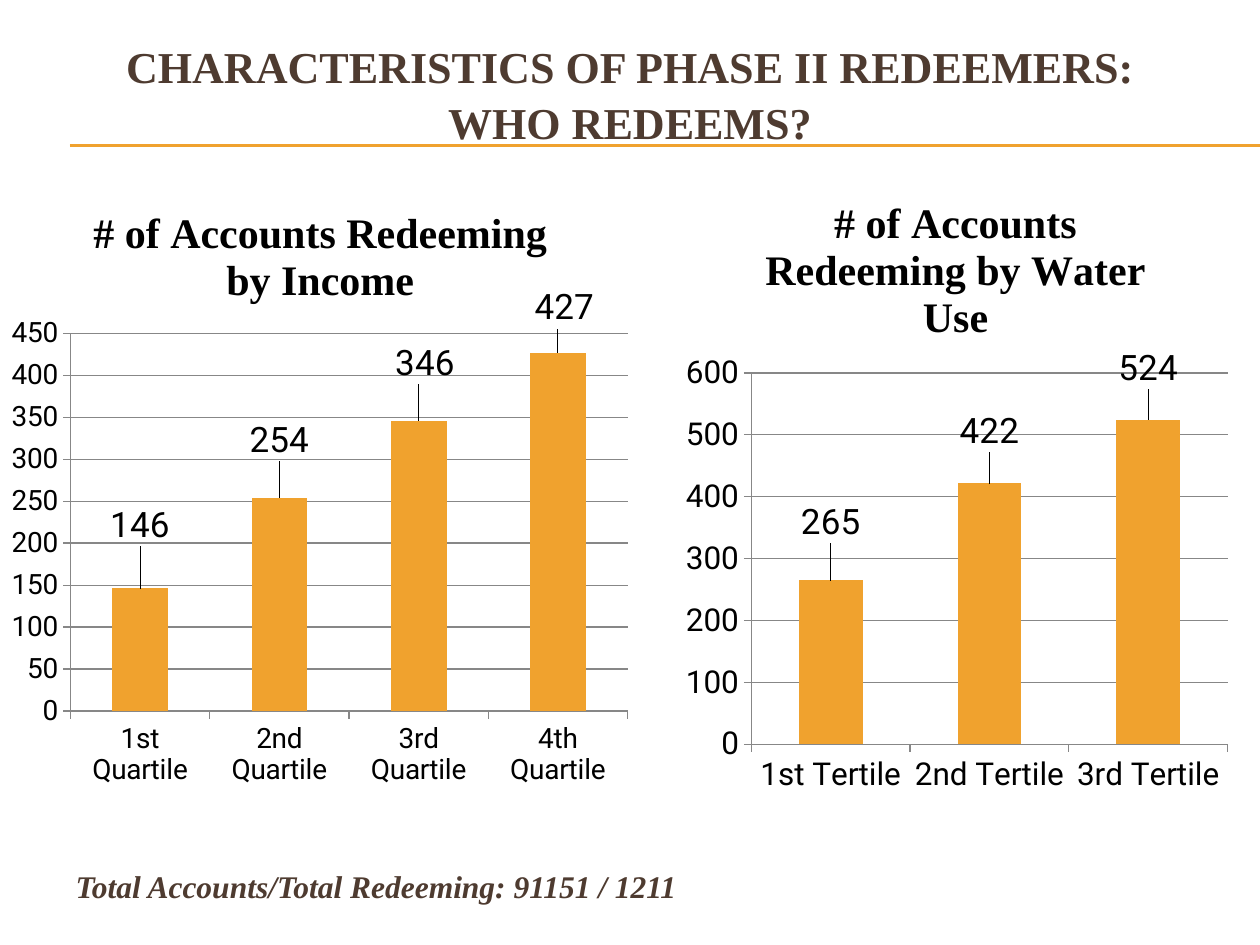
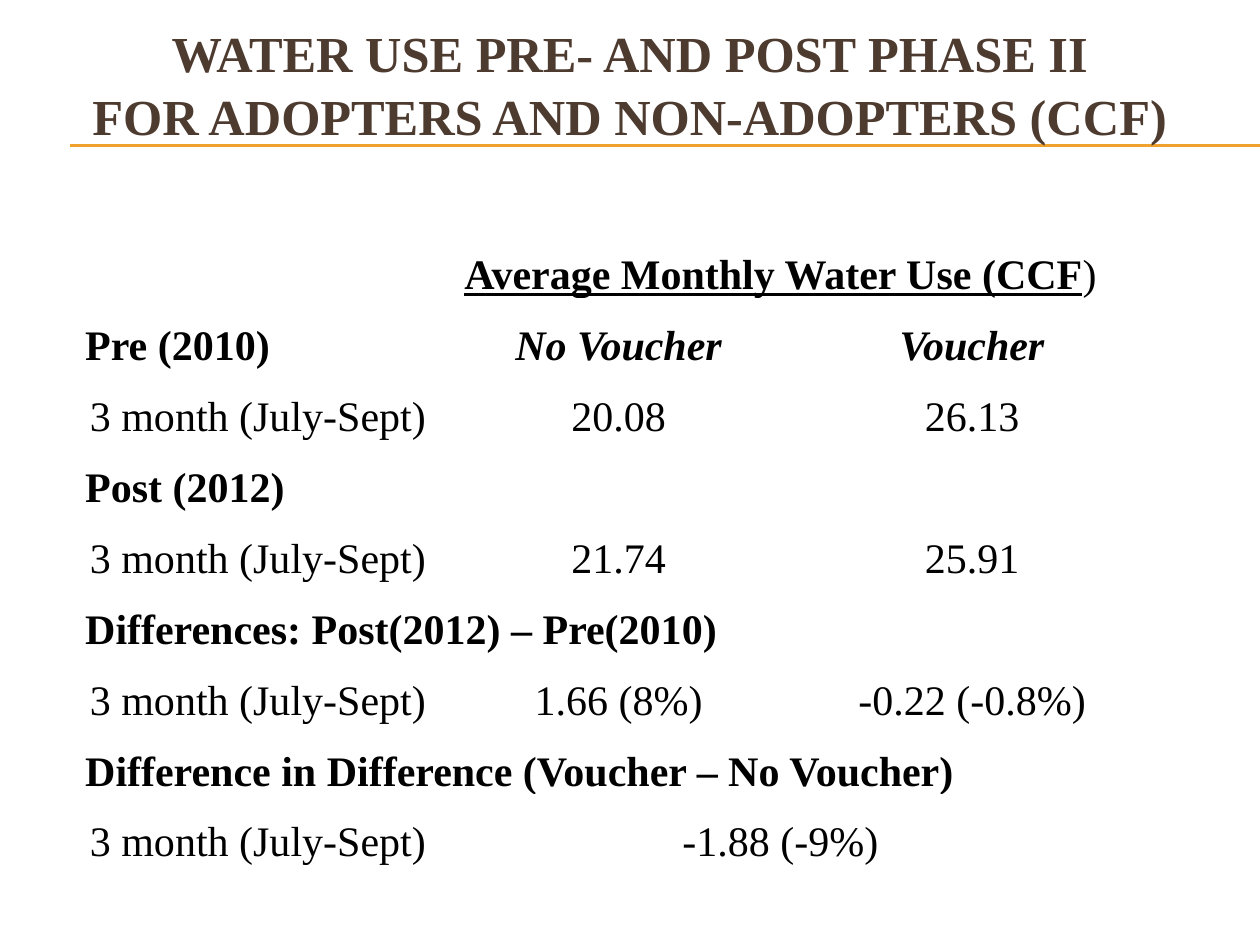
from dataclasses import dataclass

from lxml.etree import SubElement
from pptx import Presentation
from pptx.chart.data import CategoryChartData
from pptx.dml.color import RGBColor
from pptx.enum.chart import XL_CHART_TYPE as ChartType, XL_TICK_MARK as TickMark
from pptx.enum.shapes import MSO_CONNECTOR as Connector
from pptx.enum.text import MSO_ANCHOR as Anchor, MSO_AUTO_SIZE as AutoSize, PP_ALIGN as Align
from pptx.oxml.ns import qn
from pptx.util import Pt


@dataclass(frozen=True)
class Theme:
    brown: RGBColor = RGBColor(0x4E, 0x3B, 0x30)
    amber: RGBColor = RGBColor(0xF0, 0xA2, 0x2E)
    black: RGBColor = RGBColor(0, 0, 0)
    grey: RGBColor = RGBColor(0x87, 0x87, 0x87)
    serif: str = "Times New Roman"
    sans: str = "Roboto"
    heading_size: float = 24
    note_size: float = 18
    label_size: float = 20


TITLE_ONLY, TITLE_AND_BODY = 5, 1


def set_font(font, color, **values):
    for name, value in values.items():
        setattr(font, name, value)
    font.color.rgb = color


def place(shape, left, top, width, height):
    box = dict(left=left, top=top, width=width, height=height)
    for name, value in box.items():
        setattr(shape, name, Pt(value))


def add_layout(parent, index, **values):
    """Insert a manual chart layout, given in fractions of the chart."""
    for old in parent.findall(qn("c:layout")):
        parent.remove(old)
    layout = parent.makeelement(qn("c:layout"))
    parent.insert(index, layout)
    manual = SubElement(layout, qn("c:manualLayout"))
    for name, value in values.items():
        SubElement(manual, qn(f"c:{name}")).set("val", str(value))


class Deck:
    def __init__(self, theme):
        self.theme = theme
        self.presentation = Presentation()
        self.presentation.slide_width = Pt(720)
        self.presentation.slide_height = Pt(540)
        self.slide = None

    def add_slide(self, layout):
        layouts = self.presentation.slide_layouts
        self.slide = self.presentation.slides.add_slide(layouts[layout])

    def add_master_rule(self, y):
        rule = self.slide.shapes.add_connector(
            Connector.STRAIGHT, Pt(40), Pt(y), Pt(720), Pt(y))
        rule.line.color.rgb = self.theme.amber
        rule.line.width = Pt(0.75)
        SubElement(rule.element.spPr, qn("a:effectLst"))
        self.presentation.slide_master.shapes.element.append(rule.element)

    def fill_placeholder(self, shape, text, box, anchor, **font):
        place(shape, *box)
        frame = shape.text_frame
        frame.text = text
        frame.auto_size = AutoSize.NONE
        frame.word_wrap = True
        frame.vertical_anchor = anchor
        paragraph = frame.paragraphs[0]
        for run in paragraph.runs:
            set_font(run.font, self.theme.brown, name=self.theme.serif, bold=True, **font)
        return paragraph

    def add_title(self, text, top, size):
        paragraph = self.fill_placeholder(
            self.slide.shapes.title, text, (36, top, 648, 62.6), Anchor.MIDDLE, size=Pt(size))
        paragraph.alignment = Align.CENTER
        paragraph.line_spacing = 1.05

    def add_note(self, text, box):
        paragraph = self.fill_placeholder(
            self.slide.placeholders[1], text, box, Anchor.TOP,
            size=Pt(self.theme.note_size), italic=True)
        paragraph.space_before, paragraph.space_after = Pt(3.6), Pt(6)
        properties = paragraph._p.get_or_add_pPr()
        properties.set("marL", "0")
        properties.set("indent", "0")
        SubElement(properties, qn("a:buNone"))

    def add_column_chart(self, title, values, box, plot, axis_size, top_value, step, offsets):
        theme = self.theme
        data = CategoryChartData()
        data.categories = list(values)
        data.add_series("Series 1", list(values.values()))
        chart = self.slide.shapes.add_chart(
            ChartType.COLUMN_CLUSTERED, *map(Pt, box), data).chart
        chart.has_legend = False
        set_font(chart.font, theme.black, name=theme.sans, size=Pt(10))

        # Heading and plot area
        chart.has_title = True
        heading = chart.chart_title
        heading.include_in_layout = False
        heading.text_frame.text = title
        set_font(heading.text_frame.paragraphs[0].runs[0].font, theme.black,
                 name=theme.serif, size=Pt(theme.heading_size), bold=True)
        left, top, width, height = plot
        add_layout(chart.element.find(".//" + qn("c:plotArea")), 0,
                   layoutTarget="inner", xMode="edge", yMode="edge",
                   x=left, y=top, w=width, h=height)

        # Axes
        for axis in (chart.category_axis, chart.value_axis):
            axis.major_tick_mark = TickMark.OUTSIDE
            axis.minor_tick_mark = TickMark.NONE
            axis.format.line.color.rgb = theme.grey
            set_font(axis.tick_labels.font, theme.black, name=theme.sans, size=Pt(axis_size))
        scale = dict(minimum_scale=0, maximum_scale=top_value, major_unit=step,
                     has_major_gridlines=True)
        for name, value in scale.items():
            setattr(chart.value_axis, name, value)
        chart.value_axis.major_gridlines.format.line.color.rgb = theme.grey

        # Columns and their raised value labels
        bars = chart.plots[0]
        bars.gap_width = 150
        bars.vary_by_categories = False
        series = bars.series[0]
        series.format.fill.solid()
        series.format.fill.fore_color.rgb = theme.amber
        label_font = dict(name=theme.sans, size=Pt(theme.label_size))
        series.data_labels.show_value = True
        set_font(series.data_labels.font, theme.black, **label_font)
        for index, (x, y) in enumerate(offsets):
            set_font(series.points[index].data_label.font, theme.black, **label_font)
        for label, (x, y) in zip(chart.element.iter(qn("c:dLbl")), offsets):
            add_layout(label, 1, x=x, y=y)

    def add_table(self, rows, box, column_widths, row_height):
        frame = self.slide.shapes.add_table(len(rows), len(column_widths), *map(Pt, box))
        table = frame.table
        table.first_row = table.horz_banding = False
        for column, width in zip(table.columns, column_widths):
            column.width = Pt(width)
        for row in table.rows:
            row.height = Pt(row_height)
        for cell in table.iter_cells():
            cell.fill.background()
            cell.vertical_anchor = Anchor.BOTTOM
            margins = dict(margin_left=0.7, margin_right=0.7, margin_top=0.7, margin_bottom=0)
            for name, value in margins.items():
                setattr(cell, name, Pt(value))
        for row, cells in enumerate(rows):
            for column, span, align, runs in cells:
                cell = table.cell(row, column)
                if span > 1:
                    cell.merge(table.cell(row, column + span - 1))
                paragraph = cell.text_frame.paragraphs[0]
                paragraph.alignment = align
                paragraph.line_spacing = 1.5
                for text, style in runs:
                    run = paragraph.add_run()
                    run.text = text
                    set_font(run.font, self.theme.black, name=self.theme.serif,
                             size=Pt(self.theme.heading_size), **style)
        place(frame, *box)


# Table entries: (column, span, alignment, runs)
def section(text, span=1):
    return 0, span, Align.LEFT, [(text, dict(bold=True))]


def centred(column, text, span=1, **style):
    return column, span, Align.CENTER, [(text, style)]


def quarter(*values):
    label = (0, 1, Align.RIGHT, [("3 month (July-Sept)", {})])
    return [label] + [centred(column, text) for column, text in enumerate(values, 1)]


def build_redeemers(deck):
    deck.add_slide(TITLE_AND_BODY)
    for y in (82.8, 83.5):
        deck.add_master_rule(y)
    deck.add_title("CHARACTERISTICS OF PHASE II REDEEMERS:\vWHO REDEEMS?", 21.6, 25.2)
    deck.add_note("Total Accounts/Total Redeeming: 91151 / 1211", (36, 492, 666, 36))
    deck.add_column_chart(
        "# of Accounts Redeeming by Income",
        {"1st Quartile": 146, "2nd Quartile": 254, "3rd Quartile": 346, "4th Quartile": 427},
        box=(0, 102, 366, 354), plot=(0.11, 0.25, 0.87, 0.61),
        axis_size=16, top_value=450, step=50,
        offsets=[(0, -0.06), (0, -0.05), (0.01, -0.05), (0.01, -0.03)])
    deck.add_column_chart(
        "# of Accounts Redeeming by Water Use",
        {"1st Tertile": 265, "2nd Tertile": 422, "3rd Tertile": 524},
        box=(384, 96, 324, 366), plot=(0.14, 0.32, 0.84, 0.58),
        axis_size=18, top_value=600, step=100,
        offsets=[(0, -0.05), (0, -0.04), (0, -0.04)])


def build_water_use(deck):
    deck.add_slide(TITLE_ONLY)
    deck.add_title("WATER USE PRE- AND POST PHASE II\vFOR ADOPTERS AND NON-ADOPTERS (CCF)",
                   15.8, 28.8)
    header = (1, 2, Align.CENTER, [
        ("Average Monthly Water Use (CCF", dict(bold=True, underline=True)), (")", {})])
    emphasis = dict(bold=True, italic=True)
    rows = [
        [header],
        [section("Pre (2010)"), centred(1, "No Voucher", **emphasis),
         centred(2, "Voucher", **emphasis)],
        quarter("20.08", "26.13"),
        [section("Post (2012)", 2)],
        quarter("21.74", "25.91"),
        [section("Differences: Post(2012) – Pre(2010)", 3)],
        quarter("1.66 (8%)", "-0.22 (-0.8%)"),
        [section("Difference in Difference (Voucher – No Voucher)", 3)],
        quarter()[:1] + [centred(1, "-1.88 (-9%)", 2)],
    ]
    deck.add_table(rows, (48, 130.3, 600, 395.3), (196, 219, 185), 26)


def main():
    deck = Deck(Theme())
    build_redeemers(deck)
    build_water_use(deck)
    deck.presentation.save("out.pptx")


if __name__ == "__main__":
    main()
